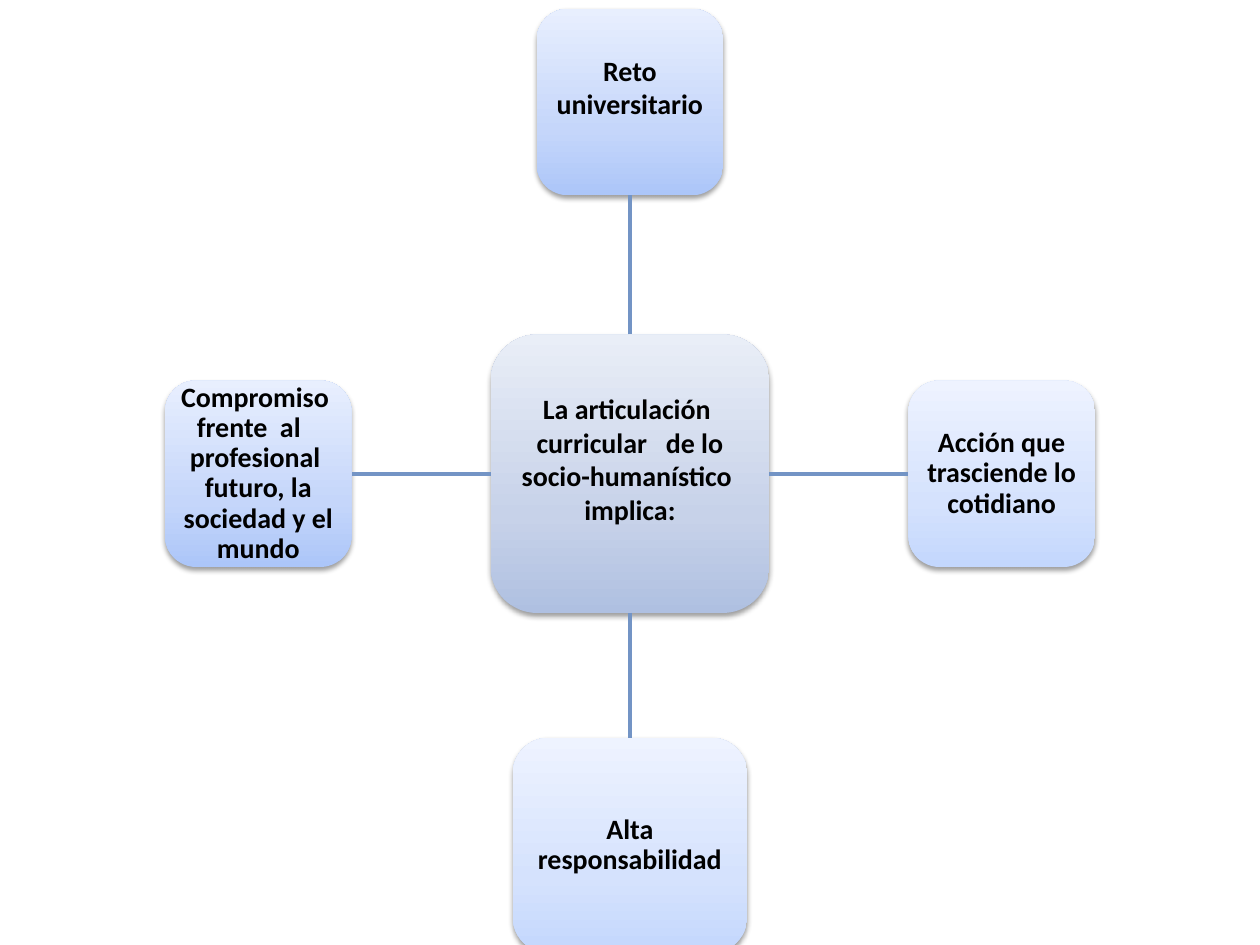
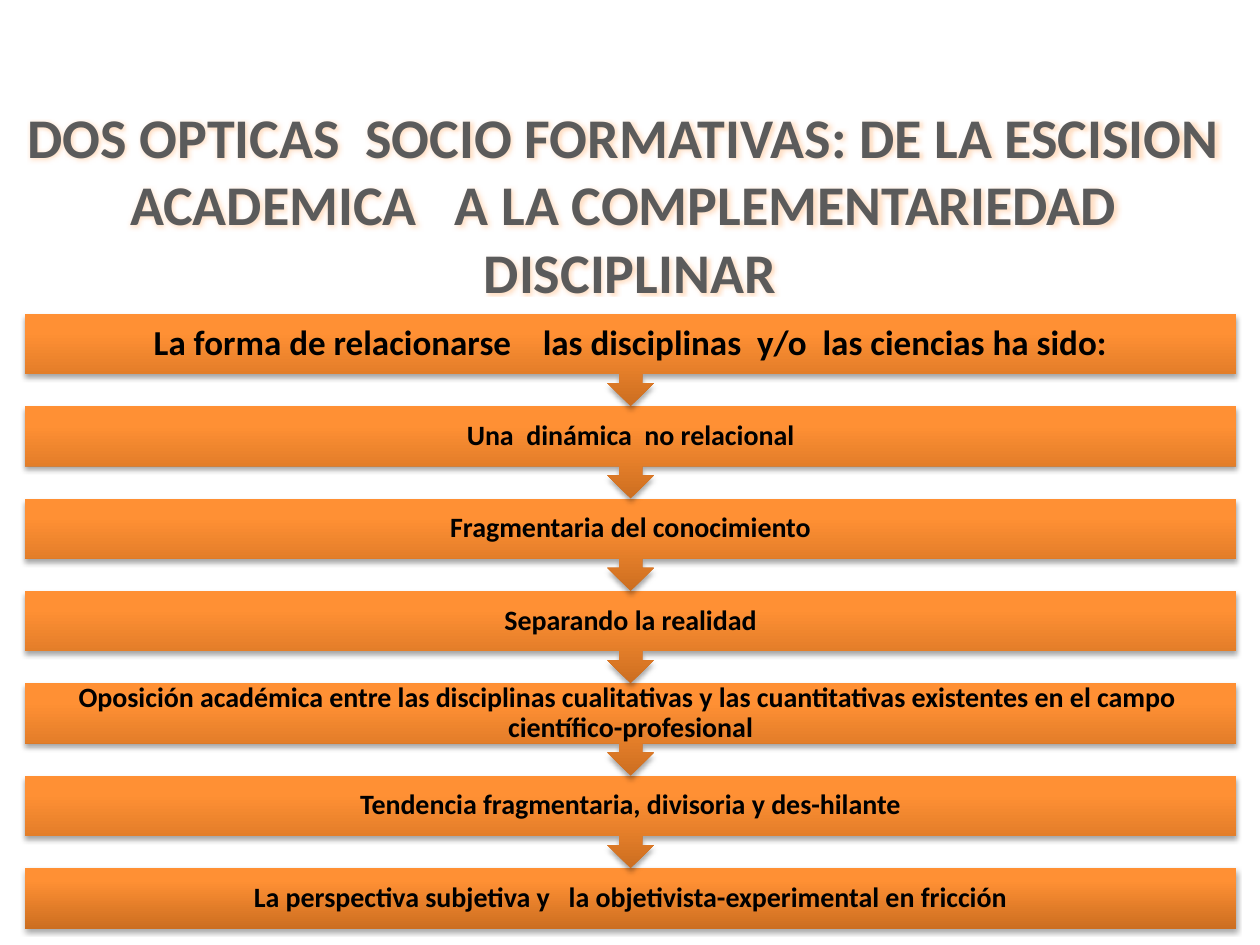
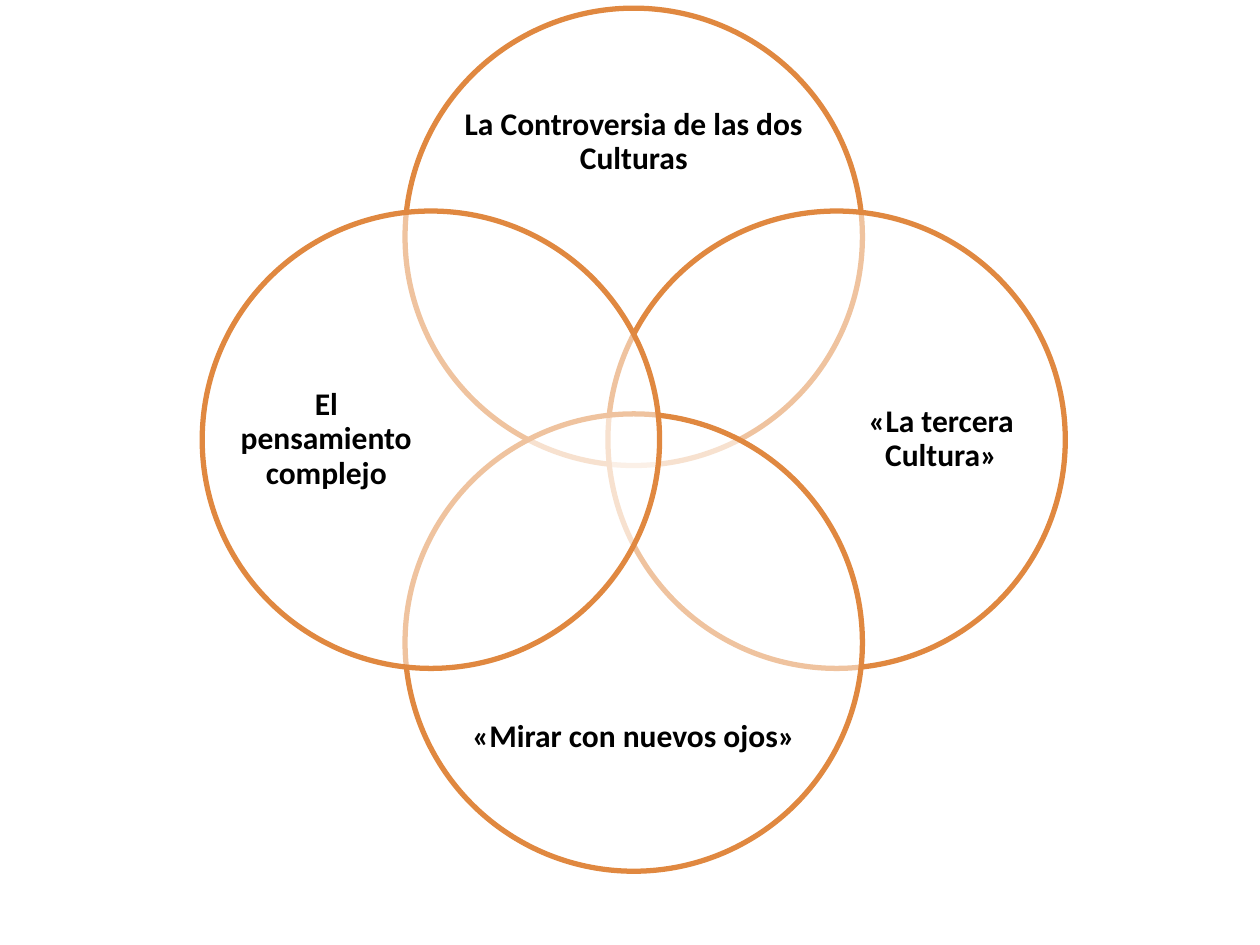
import copy
from dataclasses import dataclass

import pptx
import pptx.dml.color
import pptx.enum.shapes
import pptx.enum.text
import pptx.oxml
import pptx.oxml.ns
import pptx.util
from lxml import etree

Inches, Pt = pptx.util.Inches, pptx.util.Pt
MSO_SHAPE = pptx.enum.shapes.MSO_SHAPE
RGBColor = pptx.dml.color.RGBColor
qn = pptx.oxml.ns.qn
TOP, LEFT, BOTTOM, RIGHT = range(4)


@dataclass(frozen=True)
class Theme:
    font: str = "Calibri"
    text: str = "000000"
    title: str = "5B5B5B"
    glow: str = "FF9136"
    link: str = "7394C5"
    ring: str = "E08840"
    ring_fill: str = "FFFFFF"
    hub: tuple = ((0, "AFC0E1"), (35, "C7D2E9"), (100, "E9EEF7"))
    deep: tuple = ((0, "ACC6F9"), (35, "C5D6FA"), (100, "E8EFFE"))
    pale: tuple = ((0, "C3D7FD"), (35, "D5E2FD"), (100, "EEF3FF"))
    band: tuple = ((0, "CC6E20"), (80, "FF9034"), (100, "FF9136"))
    body_size: int = 16
    ring_size: int = 18
    lead_size: int = 20
    title_size: int = 32


THEME = Theme()

HUB = {
    "text": "La articulación  curricular   de lo socio-humanístico  implica:",
    "center": (5, 3.76), "side": 2.21,
}
# text, offset from the hub, size, gradient, side of the hub, raised text
NODES = [
    ("Reto universitario", (0, -2.95), (1.48, 1.48), THEME.deep, TOP, True),
    ("Acción que trasciende lo cotidiano", (2.95, 0), (1.48, 1.48), THEME.pale, RIGHT, False),
    ("Alta responsabilidad", (0, 2.95), (1.86, 1.71), THEME.pale, BOTTOM, False),
    ("Compromiso  frente  al    profesional  futuro, la sociedad y el mundo",
     (-2.95, 0), (1.48, 1.48), THEME.deep, LEFT, False),
]

TITLE = ("DOS OPTICAS  SOCIO FORMATIVAS: DE LA ESCISION  ACADEMICA   "
         "A LA COMPLEMENTARIEDAD  DISCIPLINAR")
STEPS = [
    "La forma de relacionarse    las disciplinas  y/o  las ciencias ha sido:",
    "Una  dinámica  no relacional",
    "Fragmentaria del conocimiento",
    "Separando la realidad",
    "Oposición académica entre las disciplinas cualitativas y las cuantitativas "
    "existentes en el campo  científico-profesional",
    "Tendencia fragmentaria, divisoria y des-hilante",
    "La perspectiva subjetiva y   la objetivista-experimental en fricción",
]

# text and direction from the middle of the rings
RINGS = [
    ("La Controversia de las dos Culturas", (0, -1)),
    ("«La tercera Cultura»", (1, 0)),
    ("«Mirar con nuevos ojos»", (0, 1)),
    ("El pensamiento complejo", (-1, 0)),
]


def rgb(value):
    return RGBColor.from_string(value)


def centered(center, size):
    """Return left, top, width and height of a box around its center."""
    return center[0] - size[0] / 2, center[1] - size[1] / 2, *size


def write(shape, text, size, color=THEME.text, inset=0, extra_bottom=0, spacing=0.9):
    """Put one bold, centred paragraph in the middle of a shape."""
    frame = shape.text_frame
    frame.word_wrap = True
    frame.vertical_anchor = pptx.enum.text.MSO_ANCHOR.MIDDLE
    frame.margin_left = frame.margin_right = frame.margin_top = Inches(inset)
    frame.margin_bottom = Inches(inset + extra_bottom)
    paragraph = frame.paragraphs[0]
    paragraph.text = text
    paragraph.alignment = pptx.enum.text.PP_ALIGN.CENTER
    paragraph.line_spacing = spacing
    font = paragraph.font
    font.name, font.size, font.bold = THEME.font, Pt(size), True
    font.color.rgb = rgb(color)
    return paragraph


def add_text(slide, box, *args, **options):
    return write(slide.shapes.add_textbox(*map(Inches, box)), *args, **options)


def add_effect(parent, tag, color, alpha, **attributes):
    effect = etree.SubElement(parent, qn(tag), {k: str(v) for k, v in attributes.items()})
    fill = etree.SubElement(effect, qn("a:srgbClr"), val=color)
    etree.SubElement(fill, qn("a:alpha"), val=str(alpha * 1000))


def add_shape(slide, kind, box):
    shape = slide.shapes.add_shape(kind, *map(Inches, box))
    shape.shadow.inherit = False
    return shape


def add_raised(slide, kind, box, stops, shadow_alpha):
    """Add a borderless shape with an upward gradient and a soft shadow below."""
    shape = add_shape(slide, kind, box)
    shape.line.fill.background()
    shape.fill.gradient()
    shape.fill.gradient_angle = 90
    properties = shape._element.spPr
    stop_list = properties.find(qn("a:gradFill")).find(qn("a:gsLst"))
    stop_list.append(copy.deepcopy(stop_list[0]))
    for stop, (position, color) in zip(shape.fill.gradient_stops, stops):
        stop.position = position / 100
        stop.color.rgb = rgb(color)
    add_effect(properties.find(qn("a:effectLst")), "a:outerShdw", "000000", shadow_alpha,
               blurRad=Pt(3.1), dist=Pt(1.7), dir=5400000, rotWithShape=0)
    return shape


def link(slide, start, start_side, end, end_side):
    connector = slide.shapes.add_connector(
        pptx.enum.shapes.MSO_CONNECTOR.STRAIGHT, 0, 0, 0, 0)
    connector.begin_connect(start, start_side)
    connector.end_connect(end, end_side)
    connector.line.color.rgb = rgb(THEME.link)
    connector.line.width = Pt(2)
    etree.SubElement(connector._element.spPr, qn("a:effectLst"))


def build_hub(slide):
    def add_node(text, center, size, stops, raised):
        node = add_raised(slide, MSO_SHAPE.ROUNDED_RECTANGLE,
                          centered(center, size), stops, 38)
        write(node, text, THEME.body_size, inset=0.04,
              extra_bottom=0.24 if raised else 0, spacing=1.0 if raised else 0.9)
        return node

    x, y = HUB["center"]
    hub = add_node(HUB["text"], (x, y), (HUB["side"], HUB["side"]), THEME.hub, True)
    for text, (dx, dy), size, stops, side, raised in NODES:
        node = add_node(text, (x + dx, y + dy), size, stops, raised)
        link(slide, hub, side, node, (side + 2) % 4)


def build_steps(slide):
    title = add_text(slide, (0, 0.99, 10, 1.25), TITLE, THEME.title_size,
                     THEME.title, inset=0.1, spacing=1.0)
    run_font = title.runs[0].font
    run_font.color.rgb = rgb(THEME.title)
    effects = etree.SubElement(run_font._element, qn("a:effectLst"))
    add_effect(effects, "a:glow", THEME.glow, 30, rad=Pt(4.2))

    first_top, last_top, band_height = 2.49, 6.89, 0.48
    last = len(STEPS) - 1
    pitch = (last_top - first_top) / last
    for index in reversed(range(len(STEPS))):
        kind, height = MSO_SHAPE.DOWN_ARROW_CALLOUT, pitch
        if index == last:
            kind, height = MSO_SHAPE.RECTANGLE, band_height
        band = add_raised(slide, kind, (0.2, first_top + index * pitch, 9.61, height),
                          THEME.band, 35)
        size, inset = (THEME.lead_size, 0.16) if index == 0 else (THEME.body_size, 0.12)
        write(band, STEPS[index], size, inset=inset)


def build_rings(slide):
    x, y = 5.03, 3.49
    for text, (dx, dy) in RINGS:
        ring = add_shape(slide, MSO_SHAPE.OVAL,
                         centered((x + 1.61 * dx, y + 1.61 * dy), (3.63, 3.63)))
        ring.fill.solid()
        ring.fill.fore_color.rgb = rgb(THEME.ring_fill)
        color = ring._element.spPr.find(qn("a:solidFill"))[0]
        etree.SubElement(color, qn("a:alpha"), val="50000")
        ring.line.color.rgb = rgb(THEME.ring)
        ring.line.width = Pt(3)
        size = (1.4, 2.79) if dx else (2.79, 1.15)
        add_text(slide, centered((x + 2.44 * dx, y + 2.36 * dy), size),
                 text, THEME.ring_size)


def main():
    presentation = pptx.Presentation()
    presentation.slide_width, presentation.slide_height = Inches(10), Inches(7.5)
    for build in (build_hub, build_steps, build_rings):
        build(presentation.slides.add_slide(presentation.slide_layouts[6]))
    presentation.save("out.pptx")


if __name__ == "__main__":
    main()
